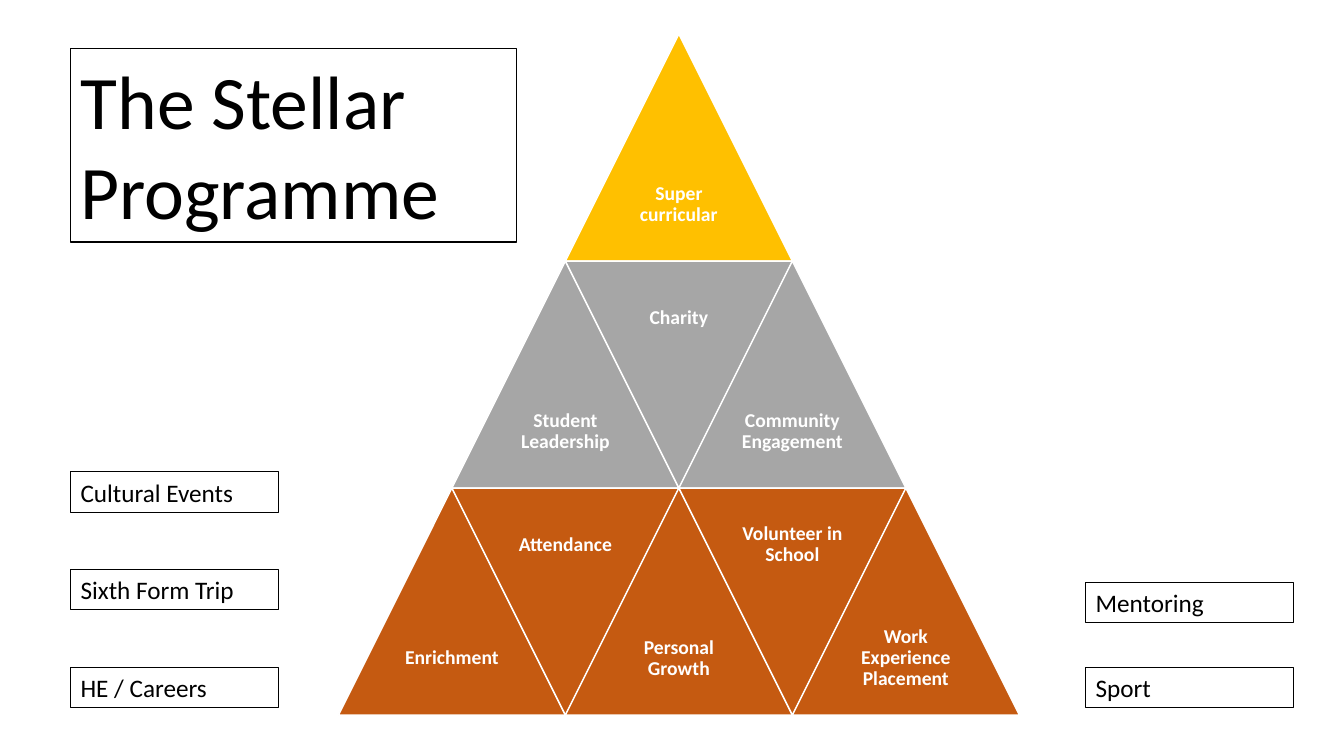
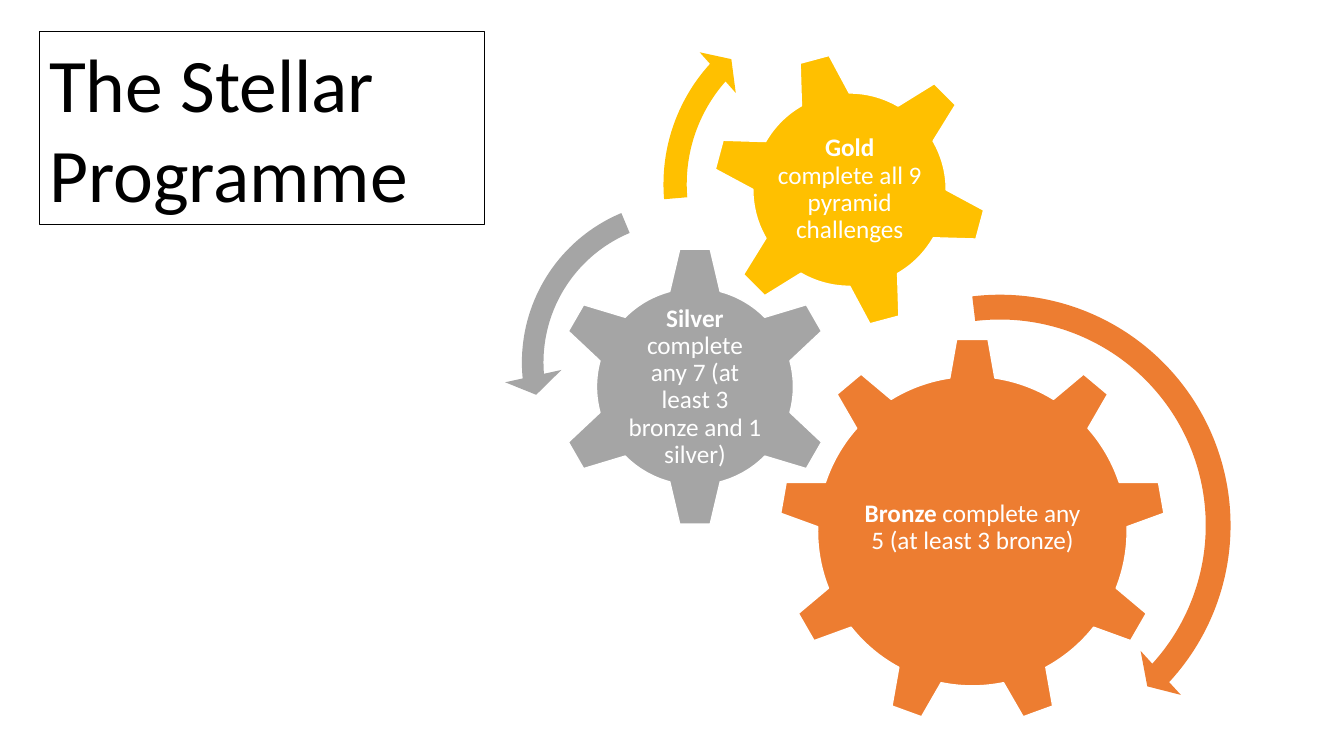
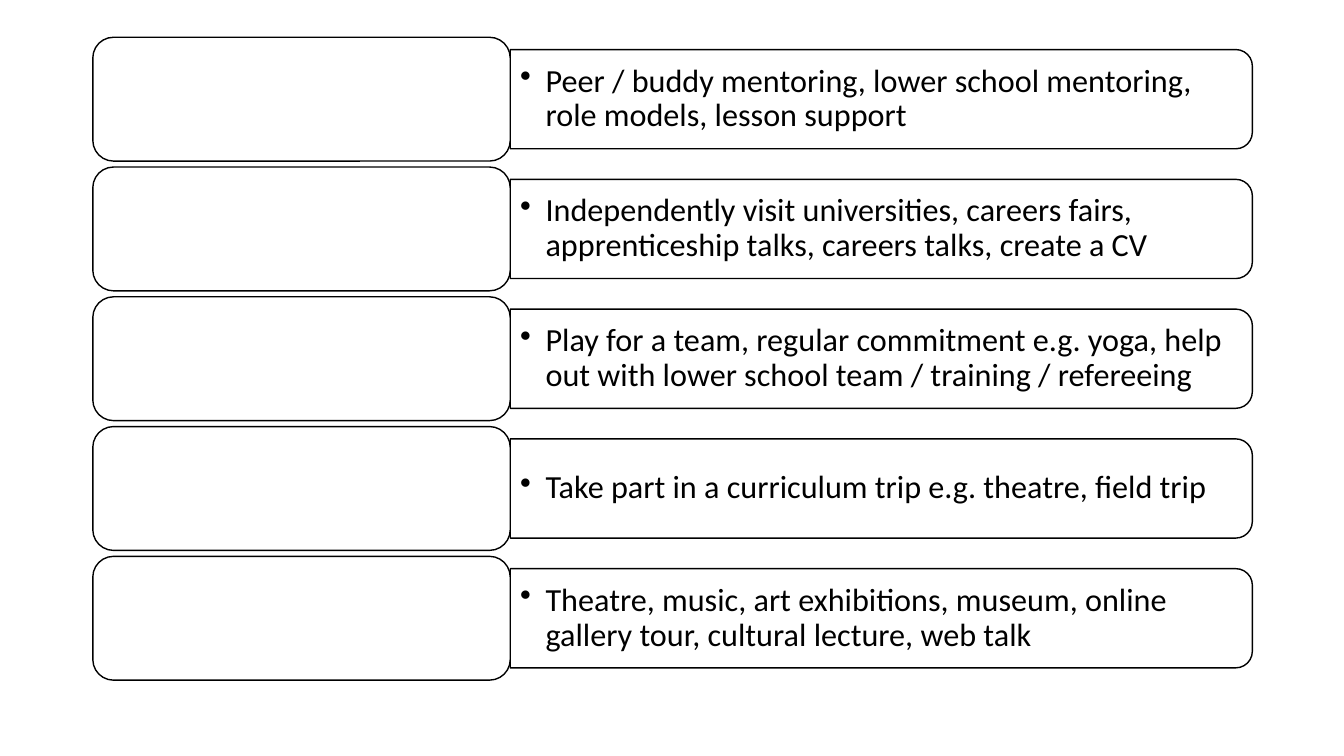
import pptx
import pptx.dml.color
import pptx.enum.shapes
import pptx.enum.text
import pptx.oxml
import pptx.util

Cm = pptx.util.Cm
Pt = pptx.util.Pt
RGBColor = pptx.dml.color.RGBColor
PRESET = pptx.enum.shapes.MSO_SHAPE
ANCHOR = pptx.enum.text.MSO_ANCHOR
ALIGN = pptx.enum.text.PP_ALIGN

BLACK = RGBColor(0x00, 0x00, 0x00)
WHITE = RGBColor(0xFF, 0xFF, 0xFF)
GOLD = RGBColor(0xFF, 0xC0, 0x00)
SILVER = RGBColor(0xA5, 0xA5, 0xA5)
PYRAMID_SILVER = RGBColor(0xA6, 0xA6, 0xA6)
BRONZE = RGBColor(0xED, 0x7D, 0x31)
PYRAMID_BRONZE = RGBColor(0xC5, 0x5A, 0x11)

TITLE = "The Stellar Programme"
TITLE_SIZE = (11.23, 4.88)
LABEL_SIZE = (5.23, 1.02)


def add_preset(slide, preset, box, fill, line=None):
    shape = slide.shapes.add_shape(preset, *map(Cm, box))
    shape.shadow.inherit = False
    shape.fill.solid()
    shape.fill.fore_color.rgb = fill
    if line is None:
        shape.line.fill.background()
    else:
        shape.line.color.rgb = line
        shape.line.width = Pt(1)
    return shape


def add_text(slide, box, runs, size, color, margins=(0.25, 0.13), **paragraph_format):
    shape = slide.shapes.add_textbox(*map(Cm, box))
    horizontal, vertical = map(Cm, margins)
    frame_format = {
        "word_wrap": True,
        "vertical_anchor": ANCHOR.MIDDLE,
        "margin_left": horizontal,
        "margin_right": horizontal,
        "margin_top": vertical,
        "margin_bottom": vertical,
    }
    for name, value in frame_format.items():
        setattr(shape.text_frame, name, value)
    paragraph = shape.text_frame.paragraphs[0]
    for name, value in paragraph_format.items():
        setattr(paragraph, name, value)
    for text, bold in runs:
        run = paragraph.add_run()
        run.text = text
        for name, value in {"name": "Calibri", "size": Pt(size), "bold": bold}.items():
            setattr(run.font, name, value)
        run.font.color.rgb = color
    return shape


presentation = pptx.Presentation()
presentation.slide_width = Cm(33.87)
presentation.slide_height = Cm(19.05)
pyramid, gears, examples = [
    presentation.slides.add_slide(presentation.slide_layouts[6]) for _ in range(3)
]
centred = {"alignment": ALIGN.CENTER, "line_spacing": 0.9}

side = 5.72
apex_left, apex_top = 14.25, 0.86
tiers = [
    (GOLD, ["Super curricular"]),
    (PYRAMID_SILVER, ["Student Leadership", "Charity", "Community Engagement"]),
    (
        PYRAMID_BRONZE,
        [
            "Enrichment",
            "Attendance",
            "Personal Growth",
            "Volunteer in School",
            "Work Experience Placement",
        ],
    ),
]
for row, (color, challenges) in enumerate(tiers):
    top = apex_top + row * side
    for column, challenge in enumerate(challenges):
        left = apex_left + (column - row) * side / 2
        inverted = column % 2 == 1
        triangle = add_preset(
            pyramid, PRESET.ISOSCELES_TRIANGLE, (left, top, side, side), color, WHITE
        )
        triangle.rotation = 180 if inverted else 0
        text_top = top if inverted else top + side / 2
        text_box = (left + side / 4, text_top, side / 2, side / 2)
        add_text(pyramid, text_box, [(challenge, True)], 14, WHITE, (0.15, 0.15), **centred)

framed_texts = [
    (pyramid, (27.36, 14.68), LABEL_SIZE, "Mentoring", 18),
    (pyramid, (27.36, 16.81), LABEL_SIZE, "Sport", 18),
    (pyramid, (1.78, 11.89), LABEL_SIZE, "Cultural Events", 18),
    (pyramid, (1.78, 14.35), LABEL_SIZE, "Sixth Form Trip", 18),
    (pyramid, (1.78, 16.81), LABEL_SIZE, "HE / Careers", 18),
    (pyramid, (1.78, 1.22), TITLE_SIZE, TITLE, 54),
    (gears, (0.99, 0.79), TITLE_SIZE, TITLE, 54),
]
for slide, position, extent, text, size in framed_texts:
    label = add_text(slide, position + extent, [(text, False)], size, BLACK)
    label.text_frame.vertical_anchor = ANCHOR.TOP
    label.text_frame.auto_size = pptx.enum.text.MSO_AUTO_SIZE.SHAPE_TO_FIT_TEXT
    label.line.color.rgb = BLACK
    label.line.width = Pt(0.75)

awards = [
    (PRESET.GEAR_9, (19.63, 8.51, 9.75, 9.75), 0, BRONZE,
     (21.59, 10.8, 5.84, 5), "Bronze", " complete any 5 (at least 3 bronze)"),
    (PRESET.GEAR_6, (13.97, 6.2, 7.09, 7.09), 0, SILVER,
     (15.75, 8, 3.53, 3.51), "Silver", " complete any 7 (at least 3 bronze and 1 silver)"),
    (PRESET.GEAR_6, (17.93, 1.3, 6.96, 6.96), 345, GOLD,
     (19.46, 2.82, 3.91, 3.91), "Gold", " complete all 9 pyramid challenges"),
]
for preset, box, rotation, color, text_box, award, rule in awards:
    gear = add_preset(gears, preset, box, color, WHITE)
    gear.rotation = rotation
    runs = [(award, True), (rule, False)]
    add_text(gears, text_box, runs, 18, WHITE, (0.08, 0.08), **centred)

arrows = [
    (PRESET.CIRCULAR_ARROW, (18.95, 6.99, 12.5, 12.5), BRONZE,
     (0.05, 2.99, 25.52, 157.87, 0.06)),
    (PRESET.LEFT_CIRCULAR_ARROW, (12.7, 4.6, 9.07, 9.07), SILVER,
     (0.06, 4.3, 104.89, 148.38, 0.08)),
    (PRESET.CIRCULAR_ARROW, (16.33, -0.25, 9.78, 9.78), GOLD,
     (0.06, 3.94, 133.14, 105.08, 0.07)),
]
for preset, box, color, adjustments in arrows:
    arrow = add_preset(gears, preset, box, color)
    for index, value in enumerate(adjustments):
        arrow.adjustments[index] = value

activities = [
    "Peer / buddy mentoring, lower school mentoring, role models, lesson support",
    "Independently visit universities, careers fairs, apprenticeship talks, careers talks, create a CV",
    "Play for a team, regular commitment e.g. yoga, help out with lower school team / training / refereeing",
    "Take part in a curriculum trip e.g. theatre, field trip",
    "Theatre, music, art exhibitions, museum, online gallery tour, cultural lecture, web talk",
]
row_pitch = 3.27
heading_left, heading_width, heading_height = 2.34, 10.52, 3.12
panel_left = heading_left + heading_width
panel_width, panel_height = 18.7, 2.5
text_height = 2.26
for row, activity in enumerate(activities):
    top = 0.94 + row * row_pitch
    middle = top + heading_height / 2
    panel_box = (
        panel_left + (panel_width - panel_height) / 2,
        middle - panel_width / 2,
        panel_height,
        panel_width,
    )
    panel = add_preset(examples, PRESET.ROUND_2_SAME_RECTANGLE, panel_box, WHITE, BLACK)
    panel.rotation = 90
    text_box = (panel_left, middle - text_height / 2, 18.57, text_height)
    bullet_text = add_text(examples, text_box, [(activity, False)], 23, BLACK, line_spacing=0.9)
    properties = bullet_text.text_frame.paragraphs[0]._p.get_or_add_pPr()
    for name, length in {"marL": Cm(0.64), "indent": Cm(-0.64)}.items():
        properties.set(name, str(length))
    bullet = pptx.oxml.parse_xml(
        '<a:buChar xmlns:a="http://schemas.openxmlformats.org/drawingml/2006/main" char="•"/>'
    )
    properties.append(bullet)
    heading_box = (heading_left, top, heading_width, heading_height)
    add_preset(examples, PRESET.ROUNDED_RECTANGLE, heading_box, WHITE, BLACK)

presentation.save("out.pptx")
